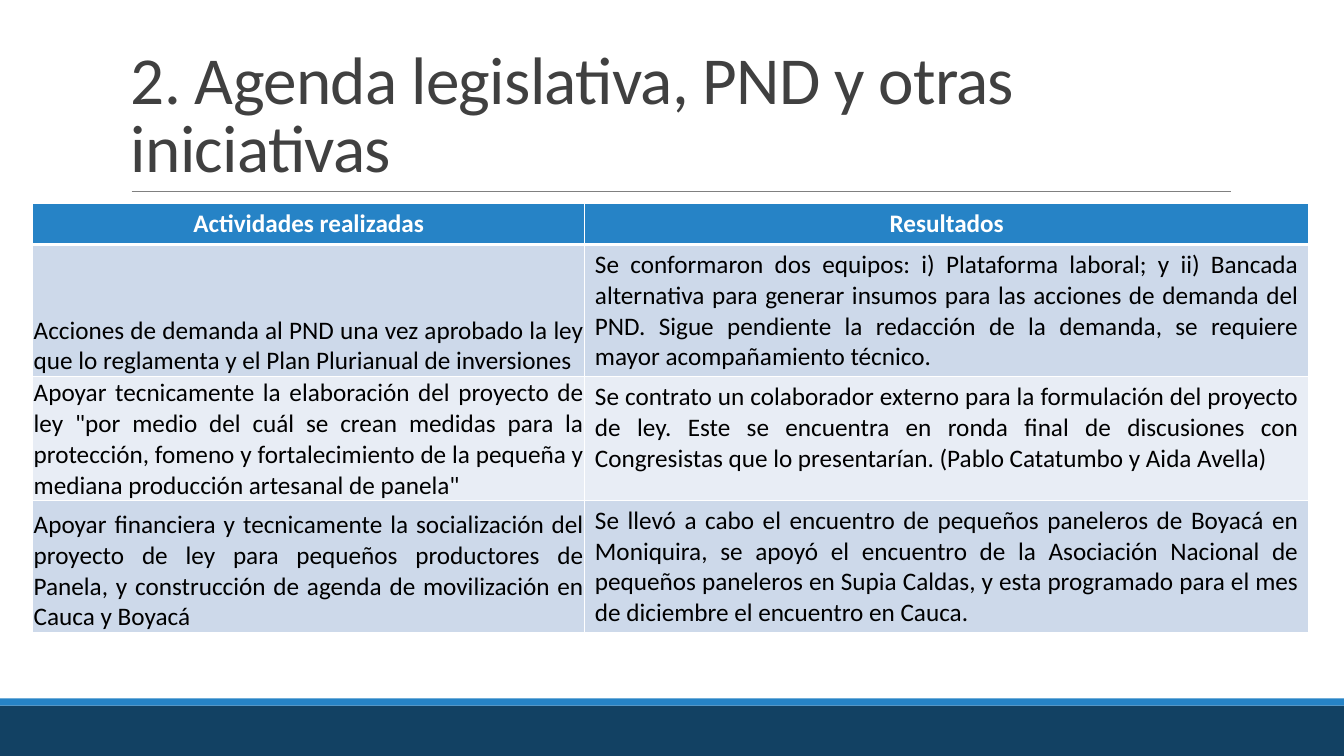
from lxml import etree
from pptx import Presentation
from pptx.dml.color import RGBColor
from pptx.enum.shapes import MSO_CONNECTOR, MSO_SHAPE
from pptx.enum.text import MSO_ANCHOR, PP_ALIGN
from pptx.oxml.ns import qn
from pptx.util import Cm, Pt

RECT = MSO_SHAPE.RECTANGLE
STRAIGHT = MSO_CONNECTOR.STRAIGHT
TOP, BOTTOM = MSO_ANCHOR.TOP, MSO_ANCHOR.BOTTOM
LEFT, CENTER, JUSTIFY = PP_ALIGN.LEFT, PP_ALIGN.CENTER, PP_ALIGN.JUSTIFY

FONT = "Calibri"
BLUE, NAVY, WHITE = "2683C6", "124163", "FFFFFF"
BANDS = ("CDD9EA", "E8EDF5")
COL_WIDTHS = (13.92, 18.24)
ROW_HEIGHTS = (1.03, 3.33, 3.12, 3.33)
TITLE = "2. Agenda legislativa, PND y otras iniciativas"
HEADERS = ("Actividades realizadas", "Resultados")
ACTIVITIES = (
    ("Acciones de demanda al PND una vez aprobado la ley que lo reglamenta y el "
     "Plan Plurianual de inversiones",
     "Se conformaron dos equipos: i) Plataforma laboral; y ii) Bancada alternativa "
     "para generar insumos para las acciones de demanda del PND. Sigue pendiente la "
     "redacción de la demanda, se requiere mayor acompañamiento técnico. "),
    ("Apoyar tecnicamente la elaboración del proyecto de ley \"por medio del cuál se "
     "crean medidas para la protección, fomeno y fortalecimiento de la pequeña y "
     "mediana producción artesanal de panela\"",
     "Se contrato un colaborador externo para la formulación del proyecto de ley. "
     "Este se encuentra en ronda final de discusiones con Congresistas que lo "
     "presentarían. (Pablo Catatumbo y Aida Avella)"),
    ("Apoyar financiera y tecnicamente la socialización del proyecto de ley para "
     "pequeños productores de Panela, y construcción de agenda de movilización en "
     "Cauca y Boyacá",
     "Se llevó a cabo el encuentro de pequeños paneleros de Boyacá en Moniquira, se "
     "apoyó el encuentro de la Asociación Nacional de pequeños paneleros en Supia "
     "Caldas, y esta programado para el mes de diciembre el encuentro en Cauca. "),
)


def color(value):
    return RGBColor.from_string(value)


def write(tf, text, size=18, fill="000000", bold=False, align=LEFT,
          line_spacing=None, tracking=None):
    tf.word_wrap = True
    p = tf.paragraphs[0]
    p.alignment = align
    p.line_spacing = line_spacing
    r = p.add_run()
    r.text = text
    r.font.name = FONT
    r.font.size = Pt(size)
    r.font.bold = bold
    r.font.color.rgb = color(fill)
    if tracking is not None:
        r.font._element.set("spc", str(round(tracking * 100)))


def add_bar(s, left, top, width, height, fill):
    sp = s.shapes.add_shape(RECT, Cm(left), Cm(top), Cm(width), Cm(height))
    sp.shadow.inherit = False
    sp.fill.solid()
    sp.fill.fore_color.rgb = color(fill)
    sp.line.fill.background()


def add_rule(s, x1, x2, y):
    line = s.shapes.add_connector(STRAIGHT, Cm(x1), Cm(y), Cm(x2), Cm(y))
    line.line.color.rgb = color("808080")
    line.line.width = Pt(0.5)
    etree.SubElement(line._element.spPr, qn("a:effectLst"))


def add_title(s):
    box = s.shapes.add_textbox(Cm(3.05), Cm(0.79), Cm(27.94), Cm(4.04))
    tf = box.text_frame
    tf.vertical_anchor = BOTTOM
    write(tf, TITLE, size=48, fill="404040", line_spacing=0.85, tracking=-0.5)


def style_cell(cell, fill, bottom=1):
    tcPr = cell._tc.get_or_add_tcPr()
    for side, width in (("L", 1), ("R", 1), ("T", 1), ("B", bottom)):
        ln = etree.SubElement(tcPr, qn(f"a:ln{side}"), w=str(Pt(width)))
        solid = etree.SubElement(ln, qn("a:solidFill"))
        etree.SubElement(solid, qn("a:srgbClr"), val=WHITE)
    cell.fill.solid()
    cell.fill.fore_color.rgb = color(fill)


def add_activity_table(s):
    frame = s.shapes.add_table(len(ROW_HEIGHTS), len(COL_WIDTHS), Cm(0.82), Cm(5.13),
                               Cm(sum(COL_WIDTHS)), Cm(sum(ROW_HEIGHTS)))
    table = frame.table
    table.horz_banding = False
    for column, width in zip(table.columns, COL_WIDTHS):
        column.width = Cm(width)
    for row, height in zip(table.rows, ROW_HEIGHTS):
        row.height = Cm(height)
    for cell, text in zip(table.rows[0].cells, HEADERS):
        style_cell(cell, BLUE, bottom=3)
        write(cell.text_frame, text, fill=WHITE, bold=True, align=CENTER)
    for i, texts in enumerate(ACTIVITIES):
        activity, result = table.rows[i + 1].cells
        activity.margin_left = activity.margin_right = activity.margin_top = Cm(0.03)
        activity.margin_bottom = 0
        activity.vertical_anchor = BOTTOM
        result.vertical_anchor = TOP
        for cell, text in zip((activity, result), texts):
            style_cell(cell, BANDS[i % 2])
            write(cell.text_frame, text, align=JUSTIFY)


def main():
    prs = Presentation()
    prs.slide_width, prs.slide_height = Cm(33.87), Cm(19.05)
    s = prs.slides.add_slide(prs.slide_layouts[6])
    add_bar(s, 0, 17.78, 33.87, 1.27, NAVY)
    add_bar(s, 0, 17.6, 33.87, 0.18, BLUE)
    add_rule(s, 3.32, 31.01, 4.83)
    add_title(s)
    add_activity_table(s)
    prs.save("out.pptx")


if __name__ == "__main__":
    main()
